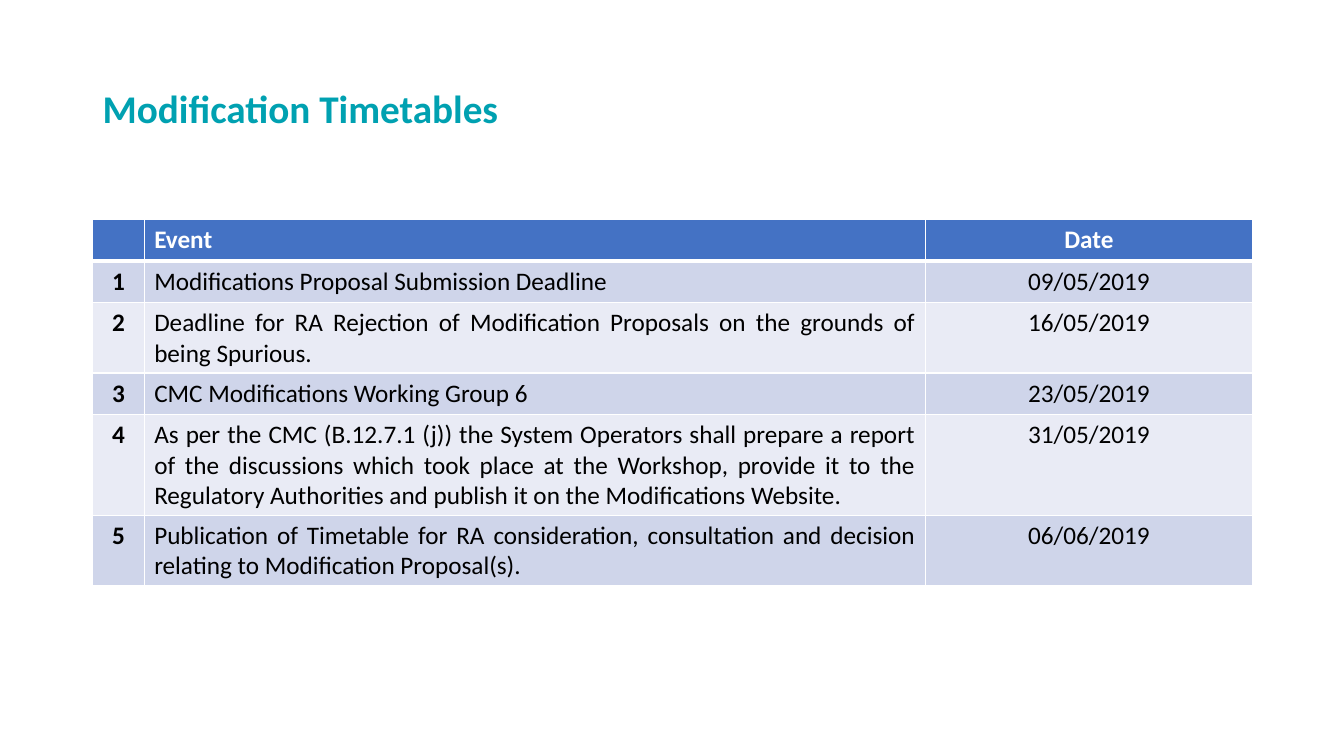
from lxml import etree
from pptx import Presentation
from pptx.dml.color import RGBColor
from pptx.enum.text import MSO_ANCHOR, PP_ALIGN
from pptx.oxml.ns import qn
from pptx.util import Inches, Pt

MIDDLE = MSO_ANCHOR.MIDDLE
LEFT, CENTER, JUSTIFY = PP_ALIGN.LEFT, PP_ALIGN.CENTER, PP_ALIGN.JUSTIFY

COLORS = {
    "title": "00A1B1",
    "header": "4472C4",
    "odd": "CFD5EA",
    "even": "E9EBF5",
    "white": "FFFFFF",
    "black": "000000",
}
FONT = "Calibri"
WIDTH, HEIGHT = 13.33, 7.5
MARGIN = 0.92
COLUMNS = (0.51, 7.75, 3.24)
TABLE_TOP = 2.18
ROW_HEIGHT = 0.41

HEADER = ("", "Event", "Date")
EVENTS = (
    ("Modifications Proposal Submission Deadline", "09/05/2019"),
    ("Deadline for RA Rejection of Modification Proposals on the grounds of "
     "being Spurious.", "16/05/2019"),
    ("CMC Modifications Working Group 6", "23/05/2019"),
    ("As per the CMC (B.12.7.1 (j)) the System Operators shall prepare a report "
     "of the discussions which took place at the Workshop, provide it to the "
     "Regulatory Authorities and publish it on the Modifications Website.",
     "31/05/2019"),
    ("Publication of Timetable for RA consideration, consultation and decision "
     "relating to Modification Proposal(s).", "06/06/2019"),
)


def rgb(name):
    return RGBColor.from_string(COLORS[name])


def write(frame, text, size, color, bold, align):
    para = frame.paragraphs[0]
    para.text = text
    para.alignment = align
    font = para.font if not text else para.runs[0].font
    font.name, font.size, font.bold = FONT, Pt(size), bold
    font.color.rgb = rgb(color)
    return para


def add_title(slide, text):
    box = slide.shapes.add_textbox(Inches(MARGIN), Inches(0.4),
                                   Inches(sum(COLUMNS)), Inches(1.45))
    frame = box.text_frame
    frame.word_wrap = True
    frame.vertical_anchor = MIDDLE
    para = write(frame, text, 28, "title", True, LEFT)
    para.line_spacing = 0.7


def set_borders(cell, top, bottom):
    """Draw white cell edges; top and bottom are widths in points."""
    properties = cell._tc.get_or_add_tcPr()
    for side, width in (("L", 1), ("R", 1), ("T", top), ("B", bottom)):
        line = etree.SubElement(properties, qn(f"a:ln{side}"), w=str(Pt(width)))
        fill = etree.SubElement(line, qn("a:solidFill"))
        etree.SubElement(fill, qn("a:srgbClr"), val=COLORS["white"])


def fill_cell(cell, row, column, text):
    is_header = row == 0
    set_borders(cell, 3 if row == 1 else 1, 3 if is_header else 1)
    band = "header" if is_header else ("even", "odd")[row % 2]
    cell.fill.solid()
    cell.fill.fore_color.rgb = rgb(band)
    event_align = LEFT if is_header else JUSTIFY
    write(cell.text_frame, text, 18, "white" if is_header else "black",
          is_header or column == 0, event_align if column == 1 else CENTER)


def add_timetable(slide):
    rows = [HEADER]
    rows += [(str(number), *event) for number, event in enumerate(EVENTS, 1)]
    table = slide.shapes.add_table(
        len(rows), len(COLUMNS), Inches(MARGIN), Inches(TABLE_TOP),
        Inches(sum(COLUMNS)), Inches(ROW_HEIGHT * len(rows))).table
    for column, width in zip(table.columns, COLUMNS):
        column.width = Inches(width)
    for row, texts in enumerate(rows):
        for column, text in enumerate(texts):
            fill_cell(table.cell(row, column), row, column, text)


def main():
    deck = Presentation()
    deck.slide_width, deck.slide_height = Inches(WIDTH), Inches(HEIGHT)
    slide = deck.slides.add_slide(deck.slide_layouts[6])
    slide.background.fill.solid()
    slide.background.fill.fore_color.rgb = rgb("white")
    add_title(slide, "Modification Timetables")
    add_timetable(slide)
    deck.save("out.pptx")


if __name__ == "__main__":
    main()
